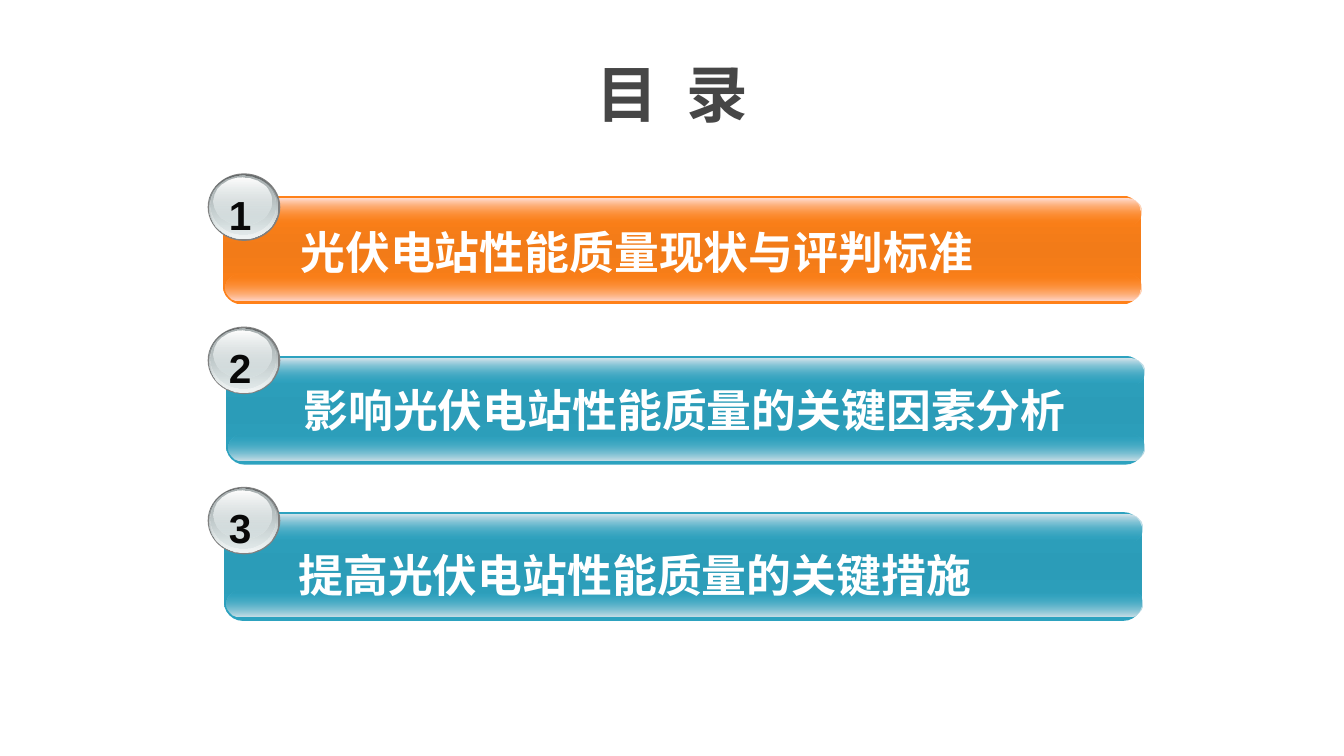
import pptx
import pptx.util
import pptx.dml.color
import pptx.enum.shapes
import pptx.enum.text
import pptx.oxml.ns
import lxml.etree

Inches = pptx.util.Inches
RGBColor = pptx.dml.color.RGBColor
SHAPE = pptx.enum.shapes.MSO_SHAPE
ALIGN = pptx.enum.text.PP_ALIGN
qn = pptx.oxml.ns.qn

WHITE = RGBColor(0xFF, 0xFF, 0xFF)
BLACK = RGBColor(0x08, 0x08, 0x08)
TITLE_GREY = RGBColor(0x46, 0x46, 0x46)
RIM_GREY = RGBColor(0x80, 0x80, 0x80)
DARK_GREY = RGBColor(0x63, 0x68, 0x69)
MID_GREY = RGBColor(0xAA, 0xB2, 0xB3)
SILVER = RGBColor(0xD6, 0xE1, 0xE2)
PALE_SILVER = RGBColor(0xF1, 0xF5, 0xF5)
ORANGE = {
    "base": RGBColor(0xFF, 0x81, 0x19), "middle": RGBColor(0xF2, 0x7B, 0x18),
    "top": RGBColor(0xFF, 0xDF, 0xD6), "bottom": RGBColor(0xFF, 0xD7, 0xCB),
}
TEAL = {
    "base": RGBColor(0x2D, 0xA2, 0xBF), "middle": RGBColor(0x2B, 0x9C, 0xB8),
    "top": RGBColor(0xD7, 0xE5, 0xEC), "bottom": RGBColor(0xCC, 0xDF, 0xE7),
}

CJK_FONT = "Noto Sans CJK SC"
TITLE = "目  录"
TITLE_FORMAT = {"size": pptx.util.Pt(44), "bold": True, "name": CJK_FONT}
ENTRY_FORMAT = {"size": pptx.util.Pt(32), "bold": True, "name": CJK_FONT}
NUMBER_FORMAT = {"size": pptx.util.Pt(29), "bold": True, "name": "Arial"}

ENTRIES = [
    {"text": "光伏电站性能质量现状与评判标准", "palette": ORANGE, "bar": (2.21, 1.94),
     "label": (2.86, 2.17, 8.22, 0.66), "spacing": 1, "badge_top": 1.72},
    {"text": "影响光伏电站性能质量的关键因素分析", "palette": TEAL, "bar": (2.24, 3.53),
     "label": (2.89, 3.74, 8.22, 0.66), "spacing": 1, "badge_top": 3.24},
    {"text": "提高光伏电站性能质量的关键措施", "palette": TEAL, "bar": (2.22, 5.08),
     "label": (2.84, 4.84, 8.22, 1.03), "spacing": 2, "badge_top": 4.83},
]
BADGE_LEFT = 2.06
BADGE_LAYERS = [
    ((0, 0, 0.72, 0.67), [(0, RIM_GREY, 100), (100, RIM_GREY, 100)]),
    ((0.01, 0.01, 0.69, 0.64), [(0, DARK_GREY, 100), (100, SILVER, 100)]),
    ((0.02, 0.02, 0.67, 0.63), [(0, SILVER, 0), (100, PALE_SILVER, 100)]),
    ((0.03, 0.02, 0.64, 0.59), [(0, MID_GREY, 100), (100, SILVER, 48)]),
    ((0.06, 0.04, 0.57, 0.47), [(0, WHITE, 100), (100, SILVER, 38)]),
]


def fill_gradient(shape, stops):
    """Fill a shape from top to bottom with (percent, colour, opacity) stops."""
    shape.fill.gradient()
    shape.fill.gradient_angle = 270
    stop_list = next(shape.fill._xPr.iter(qn("a:gsLst")))
    for stop in list(stop_list):
        stop_list.remove(stop)
    for position, color, opacity in stops:
        stop = lxml.etree.SubElement(stop_list, qn("a:gs"), pos=str(position * 1000))
        value = lxml.etree.SubElement(stop, qn("a:srgbClr"), val=str(color))
        if opacity < 100:
            lxml.etree.SubElement(value, qn("a:alpha"), val=str(opacity * 1000))


def add_layer(group, kind, box, stops, adjustment=None):
    """Add one borderless gradient layer to a group."""
    shape = group.shapes.add_shape(kind, *map(Inches, box))
    shape.shadow.inherit = False
    shape.line.fill.background()
    if adjustment is not None:
        shape.adjustments[0] = adjustment
    if stops[0] == (0, stops[-1][1], 100) and len(stops) == 2:
        shape.fill.solid()
        shape.fill.fore_color.rgb = stops[0][1]
    else:
        fill_gradient(shape, stops)


def write_text(shape, text, font_format, color, alignment):
    """Write one formatted run into a shape and return its paragraph."""
    paragraph = shape.text_frame.paragraphs[0]
    paragraph.alignment = alignment
    run = paragraph.add_run()
    run.text = text
    for name, value in font_format.items():
        setattr(run.font, name, value)
    run.font.color.rgb = color
    east_asian = lxml.etree.Element(qn("a:ea"), typeface=font_format["name"])
    run.font._element.find(qn("a:latin")).addnext(east_asian)
    return paragraph


def add_label(slide, box, *text_arguments):
    """Add a wrapped text box and return its paragraph."""
    label = slide.shapes.add_textbox(*map(Inches, box))
    frame_format = {
        "word_wrap": True, "auto_size": pptx.enum.text.MSO_AUTO_SIZE.SHAPE_TO_FIT_TEXT,
        "margin_left": Inches(0.12), "margin_right": Inches(0.12),
        "margin_top": Inches(0.06), "margin_bottom": Inches(0.06),
    }
    for name, value in frame_format.items():
        setattr(label.text_frame, name, value)
    return write_text(label, *text_arguments)


def add_bar(slide, left, top, palette):
    """Add a glossy bar with a highlight along each long edge."""
    group = slide.shapes.add_group_shape()
    base, middle = palette["base"], palette["middle"]
    add_layer(group, SHAPE.ROUNDED_RECTANGLE, (left, top, 9.11, 1.08),
              [(0, base, 100), (50, middle, 100), (100, base, 100)], 0.175)
    highlights = [
        (0.78, [(0, base, 0), (100, palette["bottom"], 100)]),
        (0.03, [(0, palette["top"], 100), (100, base, 0)]),
    ]
    for offset, stops in highlights:
        add_layer(group, SHAPE.ROUNDED_RECTANGLE,
                  (left + 0.03, top + offset, 9.08, 0.26), stops, 0.5)


def add_badge(slide, top, number):
    """Add a glossy round badge with its number."""
    group = slide.shapes.add_group_shape()
    for (x, y, width, height), stops in BADGE_LAYERS:
        add_layer(group, SHAPE.OVAL, (BADGE_LEFT + x, top + y, width, height), stops)
    add_label(slide, (BADGE_LEFT + 0.09, top + 0.1, 0.45, 0.61),
              str(number), NUMBER_FORMAT, BLACK, ALIGN.CENTER)


def main():
    """Build the contents slide."""
    presentation = pptx.Presentation()
    presentation.slide_width = Inches(13.33)
    presentation.slide_height = Inches(7.5)
    slide = presentation.slides.add_slide(presentation.slide_layouts[5])

    title = slide.shapes.title
    title_box = {"left": 0.67, "top": 0.3, "width": 12, "height": 1.25}
    for name, value in title_box.items():
        setattr(title, name, Inches(value))
    title.text_frame.vertical_anchor = pptx.enum.text.MSO_ANCHOR.MIDDLE
    write_text(title, TITLE, TITLE_FORMAT, TITLE_GREY, ALIGN.CENTER)

    for number, entry in enumerate(ENTRIES, 1):
        add_bar(slide, *entry["bar"], entry["palette"])
        paragraph = add_label(slide, entry["label"], entry["text"],
                              ENTRY_FORMAT, WHITE, ALIGN.LEFT)
        paragraph.line_spacing = float(entry["spacing"])
        add_badge(slide, entry["badge_top"], number)

    presentation.save("out.pptx")


if __name__ == "__main__":
    main()
